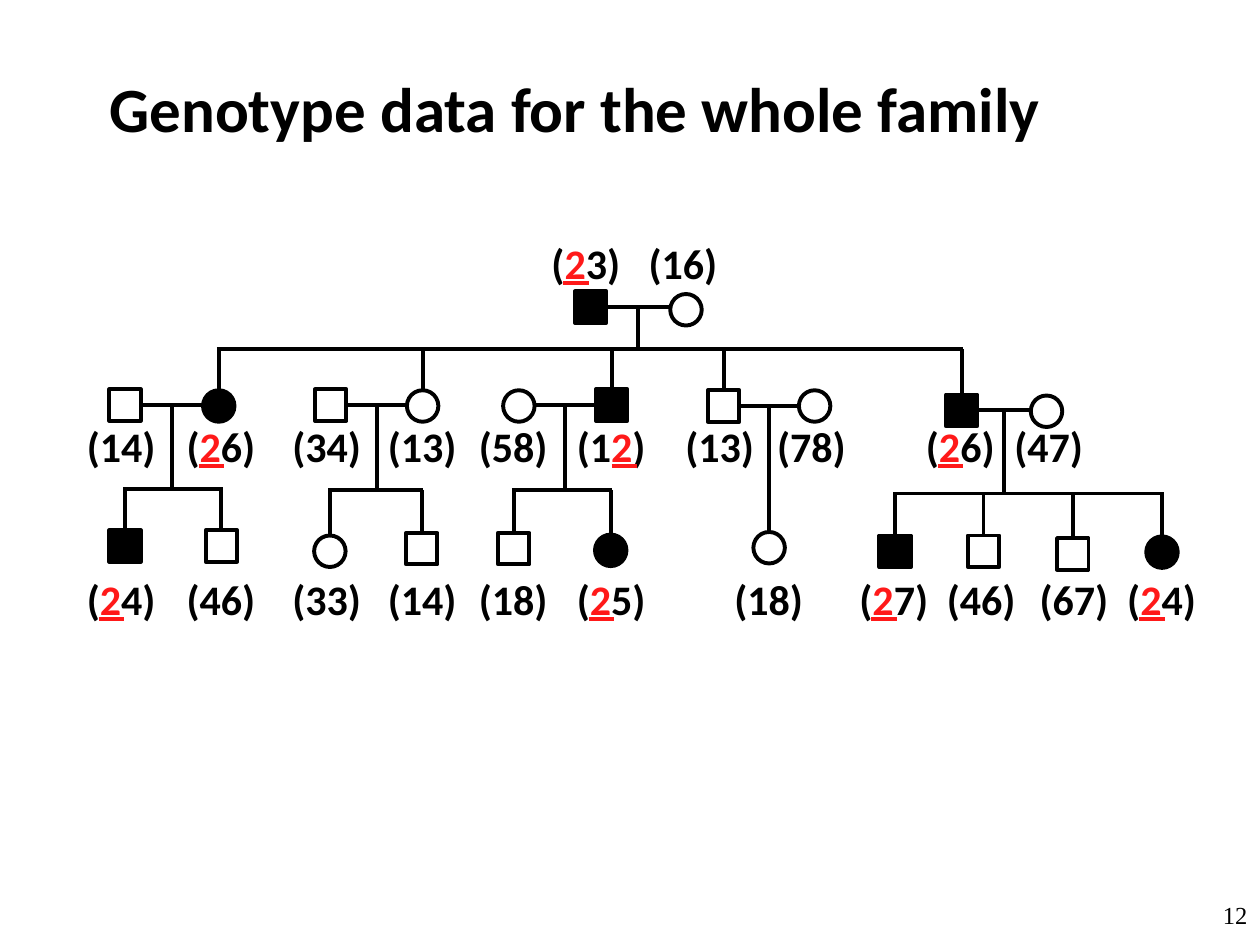
from collections import namedtuple

from lxml.etree import SubElement
from pptx import Presentation
from pptx.dml.color import RGBColor
from pptx.enum.shapes import MSO_CONNECTOR as CONN, MSO_SHAPE as SHAPE
from pptx.enum.text import MSO_AUTO_SIZE as FIT, PP_ALIGN as ALIGN
from pptx.oxml.ns import qn
from pptx.util import Pt

BLACK, RED = "000000", "FF1919"
SIZE, R = 18, 9
SQ, CI = SHAPE.RECTANGLE, SHAPE.OVAL
Person = namedtuple("Person", "sp kind x y")

FOUNDERS = [(SQ, 337.5, 175.5, "23", 308), (CI, 392, 177, "16", 363.5)]
COUPLES = [
    (SQ, 71.5, 231.5, "14", 42.5), (CI, 125, 232, "26", 99.5),
    (SQ, 189, 231.5, "34", 160), (CI, 241.5, 232, "13", 214.5),
    (CI, 296.5, 232, "58", 266.5), (SQ, 349.5, 231.5, "12", 322.5),
    (SQ, 413.5, 232, "13", 384.5), (CI, 465.5, 232, "78", 437),
    (SQ, 549.5, 234.5, "26", 522), (CI, 598, 235, "47", 572.5),
]
GRANDCHILDREN = [
    (SQ, 71.5, 312, "24", 42.5), (SQ, 126.5, 312, "46", 99.5),
    (CI, 188.5, 315, "33", 160), (SQ, 241, 313.5, "14", 214.5),
    (SQ, 293.5, 313.5, "18", 266.5), (CI, 349, 314.5, "25", 322.5),
    (CI, 439.5, 313, "18", 412.5),
    (SQ, 511.5, 315, "27", 484), (SQ, 562, 315, "46", 534),
    (SQ, 613, 316.5, "67", 587), (CI, 664, 315.5, "24", 637),
]


def rgb(hex_code):
    return RGBColor.from_string(hex_code)


class Pedigree:
    """Draws family tree elements on one slide in a shared style."""

    def __init__(self, slide):
        self.s = slide
        self.weight = Pt(2.25)
        self.label = {"name": "Calibri", "size": Pt(24), "bold": True}
        self.title = {**self.label, "size": Pt(36)}
        self.number = {"name": "Times New Roman", "size": Pt(14)}

    def text(self, x, y, w, h, runs, fmt, wrap=False, align=ALIGN.LEFT):
        tf = self.s.shapes.add_textbox(Pt(x), Pt(y), Pt(w), Pt(h)).text_frame
        tf.word_wrap = wrap
        tf.auto_size = FIT.NONE if wrap else FIT.SHAPE_TO_FIT_TEXT
        p = tf.paragraphs[0]
        p.alignment = align
        for content, color in runs:
            r = p.add_run()
            r.text = content
            r.font.color.rgb = rgb(color)
            for key, value in fmt.items():
                setattr(r.font, key, value)

    def line(self, x1, y1, x2, y2, color=BLACK, begin=None, end=None):
        c = self.s.shapes.add_connector(CONN.STRAIGHT, Pt(x1), Pt(y1), Pt(x2), Pt(y2))
        c.line.color.rgb = rgb(color)
        c.line.width = self.weight
        SubElement(c._element.spPr, qn("a:effectLst"))
        if begin:
            c.begin_connect(*begin)
        if end:
            c.end_connect(*end)

    def person(self, kind, x, y, genotype):
        sp = self.s.shapes.add_shape(kind, Pt(x - R), Pt(y - R), Pt(SIZE), Pt(SIZE))
        sp.shadow.inherit = False
        sp.line.color.rgb = rgb(BLACK)
        sp.line.width = self.weight
        if "2" in genotype:
            sp.fill.solid()
            sp.fill.fore_color.rgb = rgb(BLACK)
        else:
            sp.fill.background()
        return Person(sp, kind, x, y)

    def genotype(self, x, y, value):
        before, allele, after = f"({value})".partition("2")
        runs = [(before, BLACK), (allele, RED), (after, BLACK)]
        self.text(x, y, 54, 36.7, [run for run in runs if run[0]], self.label)
        if allele:
            left = x + 14 + 13 * (len(before) - 1)
            self.line(left, y + 29.5, left + 14.5, y + 29.5, RED)

    def generation(self, rows, label_y):
        people = []
        for kind, x, y, value, label_x in rows:
            people.append(self.person(kind, x, y, value))
            self.genotype(label_x, label_y, value)
        return people

    def family(self, parents, children, bar_y=None):
        left, right = parents
        y = left.y if left.kind == SQ else right.y
        self.line(left.x + R, y, right.x - R, y,
                  begin=(left.sp, 3) if left.kind == SQ else None,
                  end=(right.sp, 1) if right.kind == SQ else None)
        middle = (left.x + right.x) / 2
        if bar_y is None:
            bar_y = y
        else:
            self.line(middle, y, middle, bar_y)
            self.line(children[0].x - 1, bar_y, children[-1].x + 1, bar_y)
        for child in children:
            self.line(child.x, bar_y, child.x, child.y - R, end=(child.sp, 0))


def main():
    prs = Presentation()
    prs.slide_width, prs.slide_height = Pt(720), Pt(540)
    tree = Pedigree(prs.slides.add_slide(prs.slide_layouts[6]))

    tree.text(55.5, 36, 552, 51, [("Genotype data for the whole family", BLACK)], tree.title)
    founders = tree.generation(FOUNDERS, 132)
    couples = tree.generation(COUPLES, 237)
    grandchildren = tree.generation(GRANDCHILDREN, 324)

    tree.family(founders, [couples[i] for i in (1, 3, 5, 6, 8)], 199.5)
    first = 0
    for i, (count, bar_y) in enumerate([(2, 279.5), (2, 280), (2, 280), (1, None), (4, 282)]):
        tree.family(couples[2 * i:2 * i + 2], grandchildren[first:first + count], bar_y)
        first += count

    tree.text(570, 510.5, 150, 30, [("12", BLACK)], tree.number, True, ALIGN.RIGHT)
    prs.save("out.pptx")


if __name__ == "__main__":
    main()
